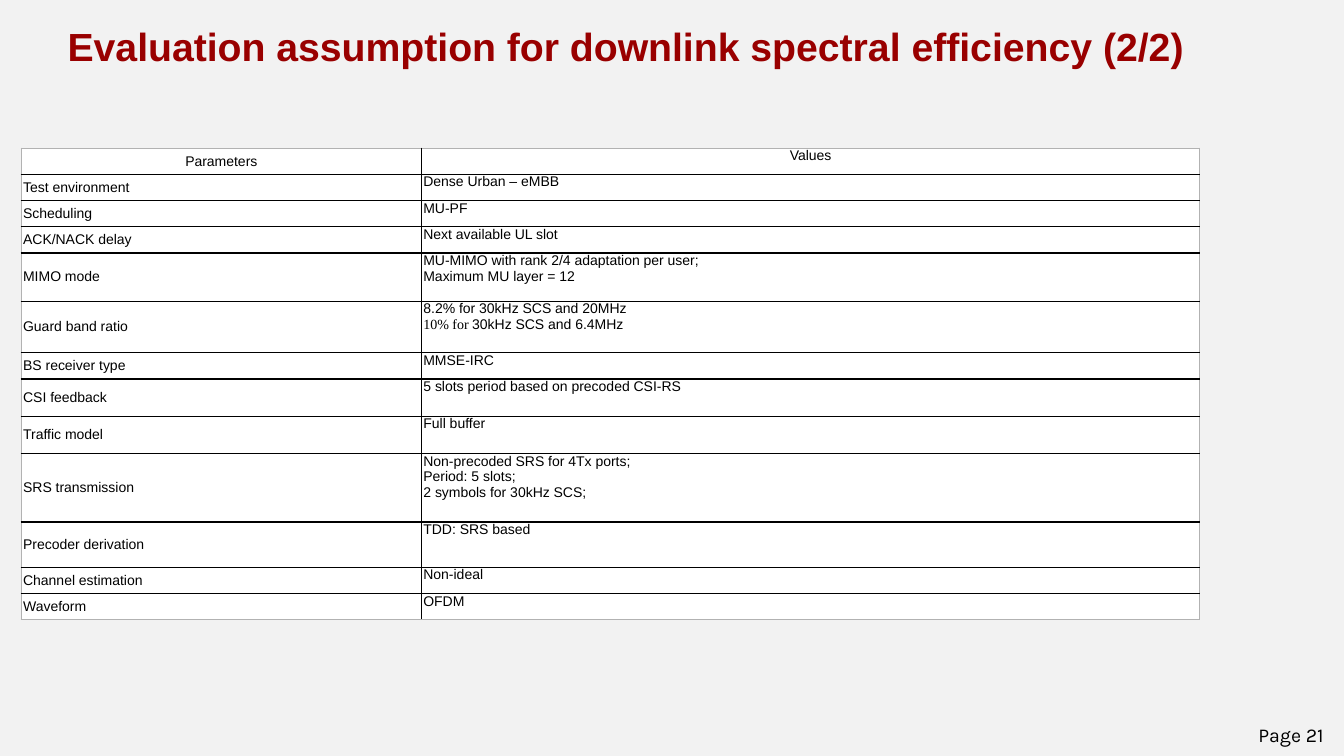
from pptx import Presentation
from pptx.dml.color import RGBColor
from pptx.enum.text import MSO_ANCHOR, PP_ALIGN
from pptx.oxml import parse_xml
from pptx.oxml.ns import nsdecls
from pptx.util import Inches, Pt

TITLE = "Evaluation assumption for downlink spectral efficiency (2/2)"
PAGE = "Page 21"
# Row height, parameter, value lines; a line is a list of (text, font key) runs
ROWS = [
    (0.26, "Parameters", ["Values"]),
    (0.26, "Test environment", ["Dense Urban – eMBB"]),
    (0.26, "Scheduling", ["MU-PF"]),
    (0.26, "ACK/NACK delay", ["Next available UL slot"]),
    (0.48, "MIMO mode", ["MU-MIMO with rank 2/4 adaptation per user;",
                         "Maximum MU layer = 12"]),
    (0.51, "Guard band ratio", ["8.2% for 30kHz SCS and 20MHz",
                                [("10% for ", "serif"),
                                 ("30kHz SCS and 6.4MHz", "sans")]]),
    (0.26, "BS receiver type", ["MMSE-IRC"]),
    (0.37, "CSI feedback", ["5 slots period based on precoded CSI-RS"]),
    (0.37, "Traffic model", ["Full buffer"]),
    (0.68, "SRS transmission", ["Non-precoded SRS for 4Tx ports;",
                                "Period: 5 slots;",
                                "2 symbols for 30kHz SCS;"]),
    (0.45, "Precoder derivation", ["TDD: SRS based"]),
    (0.26, "Channel estimation", ["Non-ideal"]),
    (0.26, "Waveform", ["OFDM"]),
]
COLS = [3.97, 7.72]
THEME = {
    "back": "F2F2F2", "title": "990000", "ink": "000000",
    "cell": "FFFFFF", "rim": "B2B2B2",
    "sans": "Arial", "serif": "Times New Roman", "foot": "Karla",
    "title_pt": 28, "cell_pt": 10, "foot_pt": 14,
}


def color(key):
    return RGBColor.from_string(THEME[key])


def add_run(para, text, face, size, ink="ink", bold=False):
    run = para.add_run()
    run.text = text
    look = {"name": THEME[face], "size": Pt(THEME[size]), "bold": bold}
    for name, value in look.items():
        setattr(run.font, name, value)
    run.font.color.rgb = color(ink)


def set_frame(frame, side, anchor, wrap=True):
    look = {"margin_left": Inches(side), "margin_right": Inches(side),
            "margin_top": 0, "margin_bottom": 0,
            "vertical_anchor": anchor, "word_wrap": wrap}
    for name, value in look.items():
        setattr(frame, name, value)


def set_edges(cell, row, col):
    """Draw the outer rim in grey and the inner rules in black."""
    rims = {"L": col == 0, "R": col == len(COLS) - 1,
            "T": row == 0, "B": row == len(ROWS) - 1}
    props = cell._tc.get_or_add_tcPr()
    for side, rim in rims.items():
        ink = THEME["rim" if rim else "ink"]
        props.append(parse_xml(
            f'<a:ln{side} {nsdecls("a")} w="{Pt(1)}"><a:solidFill>'
            f'<a:srgbClr val="{ink}"/></a:solidFill></a:ln{side}>'))


def fill_cell(cell, row, col, lines):
    set_edges(cell, row, col)
    cell.fill.solid()
    cell.fill.fore_color.rgb = color("cell")
    look = {"margin_left": Inches(0.02), "margin_right": Inches(0.02),
            "margin_top": 0, "margin_bottom": 0,
            "vertical_anchor": MSO_ANCHOR.TOP if col else MSO_ANCHOR.MIDDLE}
    for name, value in look.items():
        setattr(cell, name, value)
    frame = cell.text_frame
    for i, line in enumerate(lines):
        para = frame.add_paragraph() if i else frame.paragraphs[0]
        para.alignment = PP_ALIGN.LEFT if row else PP_ALIGN.CENTER
        runs = [(line, "sans")] if isinstance(line, str) else line
        for text, face in runs:
            add_run(para, text, face, "cell_pt")


def add_grid(slide):
    heights = [row[0] for row in ROWS]
    box = map(Inches, (0.21, 1.47, sum(COLS), sum(heights)))
    grid = slide.shapes.add_table(len(ROWS), len(COLS), *box).table
    for col, width in zip(grid.columns, COLS):
        col.width = Inches(width)
    for r, (height, name, values) in enumerate(ROWS):
        grid.rows[r].height = Inches(height)
        for c, lines in enumerate(([name], values)):
            fill_cell(grid.cell(r, c), r, c, lines)


def add_title(slide):
    title = slide.shapes.title
    box = {"left": 0.57, "top": 0.22, "width": 11.56, "height": 0.47}
    for name, value in box.items():
        setattr(title, name, Inches(value))
    set_frame(title.text_frame, 0.1, MSO_ANCHOR.MIDDLE)
    para = title.text_frame.paragraphs[0]
    para.alignment = PP_ALIGN.LEFT
    add_run(para, TITLE, "sans", "title_pt", "title", True)


def add_page(slide):
    box = map(Inches, (12.48, 7.17, 0.75, 0.25))
    frame = slide.shapes.add_textbox(*box).text_frame
    set_frame(frame, 0, MSO_ANCHOR.TOP)
    add_run(frame.paragraphs[0], PAGE, "foot", "foot_pt")


def main():
    deck = Presentation()
    deck.slide_width, deck.slide_height = Inches(13.33), Inches(7.5)
    slide = deck.slides.add_slide(deck.slide_layouts[5])
    slide.background.fill.solid()
    slide.background.fill.fore_color.rgb = color("back")
    add_page(slide)
    add_grid(slide)
    add_title(slide)
    deck.save("out.pptx")


if __name__ == "__main__":
    main()
